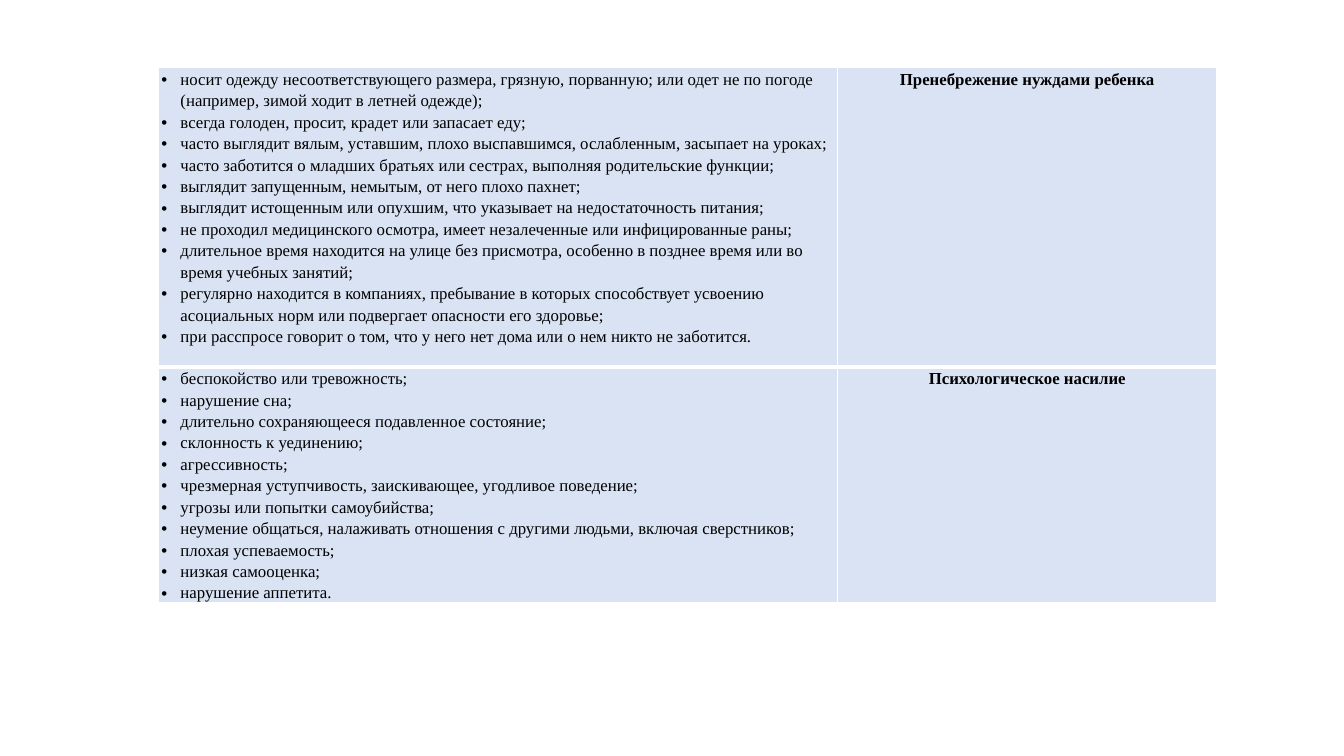
from lxml import etree
from pptx import Presentation
from pptx.dml.color import RGBColor
from pptx.enum import text as te
from pptx.oxml import ns
from pptx.util import Inches, Pt

ROWS = [
    ("Пренебрежение нуждами ребенка", 2.97, [
        "носит одежду несоответствующего размера, грязную, порванную; или одет не по погоде (например, зимой ходит в летней одежде);",
        "всегда голоден, просит, крадет или запасает еду;",
        "часто выглядит вялым, уставшим, плохо выспавшимся, ослабленным, засыпает на уроках;",
        "часто заботится о младших братьях или сестрах, выполняя родительские функции;",
        "выглядит запущенным, немытым, от него плохо пахнет;",
        "выглядит истощенным или опухшим, что указывает на недостаточность питания;",
        "не проходил медицинского осмотра, имеет незалеченные или инфицированные раны;",
        "длительное время находится на улице без присмотра, особенно в позднее время или во время учебных занятий;",
        "регулярно находится в компаниях, пребывание в которых способствует усвоению асоциальных норм или подвергает опасности его здоровье;",
        "при расспросе говорит о том, что у него нет дома или о нем никто не заботится.",
    ]),
    ("Психологическое насилие", 2.33, [
        "беспокойство или тревожность;",
        "нарушение сна;",
        "длительно сохраняющееся подавленное состояние;",
        "склонность к уединению;",
        "агрессивность;",
        "чрезмерная уступчивость, заискивающее, угодливое поведение;",
        "угрозы или попытки самоубийства;",
        "неумение общаться, налаживать отношения с другими людьми, включая сверстников;",
        "плохая успеваемость;",
        "низкая самооценка;",
        "нарушение аппетита.",
    ]),
]
COLS = (6.74, 3.76)
LEFT, TOP = 1.57, 0.67
FONT = "Times New Roman"
BLACK = RGBColor(0, 0, 0)
WHITE = RGBColor(0xFF, 0xFF, 0xFF)
PALE = RGBColor(0xDA, 0xE3, 0xF3)


def add(parent, tag, **attrs):
    """Append a drawing element with attributes."""
    return etree.SubElement(parent, ns.qn(tag), attrs)


def write(cell, lines, bold=False, align=te.PP_ALIGN.LEFT, bullet=False):
    """Fill a cell with one paragraph per line."""
    frame = cell.text_frame
    for i, line in enumerate(lines):
        para = frame.paragraphs[0] if i == 0 else frame.add_paragraph()
        para.alignment = align
        if bullet:
            props = para._p.get_or_add_pPr()
            props.set("marL", str(Inches(0.19)))
            props.set("indent", str(-Inches(0.19)))
            add(props, "a:buFont", typeface="Arial")
            add(props, "a:buChar", char="•")
        para.line_spacing = 1.15
        run = para.add_run()
        run.text = line
        font = run.font
        font.name, font.size, font.bold = FONT, Pt(12), bold
        font.color.rgb = BLACK


def style(cell, top, bottom):
    """Set the margins, borders and fill of a cell."""
    cell.margin_left = cell.margin_right = Inches(0.03)
    cell.margin_top = cell.margin_bottom = 0
    props = cell._tc.get_or_add_tcPr()
    for side, width in (("L", 1), ("R", 1), ("T", top), ("B", bottom)):
        line = add(props, f"a:ln{side}", w=str(Pt(width)))
        add(add(line, "a:solidFill"), "a:srgbClr", val=str(WHITE))
    cell.fill.solid()
    cell.fill.fore_color.rgb = PALE


def main():
    """Build the slide and save it."""
    deck = Presentation()
    deck.slide_width, deck.slide_height = Inches(13.33), Inches(7.5)
    slide = deck.slides.add_slide(deck.slide_layouts[6])
    high = sum(row[1] for row in ROWS)
    table = slide.shapes.add_table(
        len(ROWS), len(COLS), Inches(LEFT), Inches(TOP),
        Inches(sum(COLS)), Inches(high)).table
    table.first_row = table.horz_banding = False
    for col, width in zip(table.columns, COLS):
        col.width = Inches(width)
    for i, (kind, height, signs) in enumerate(ROWS):
        table.rows[i].height = Inches(height)
        for cell in table.rows[i].cells:
            style(cell, top=3 if i else 1, bottom=1 if i else 3)
        write(table.cell(i, 0), signs, bullet=True)
        write(table.cell(i, 1), [kind], bold=True, align=te.PP_ALIGN.CENTER)
    deck.save("out.pptx")


if __name__ == "__main__":
    main()
